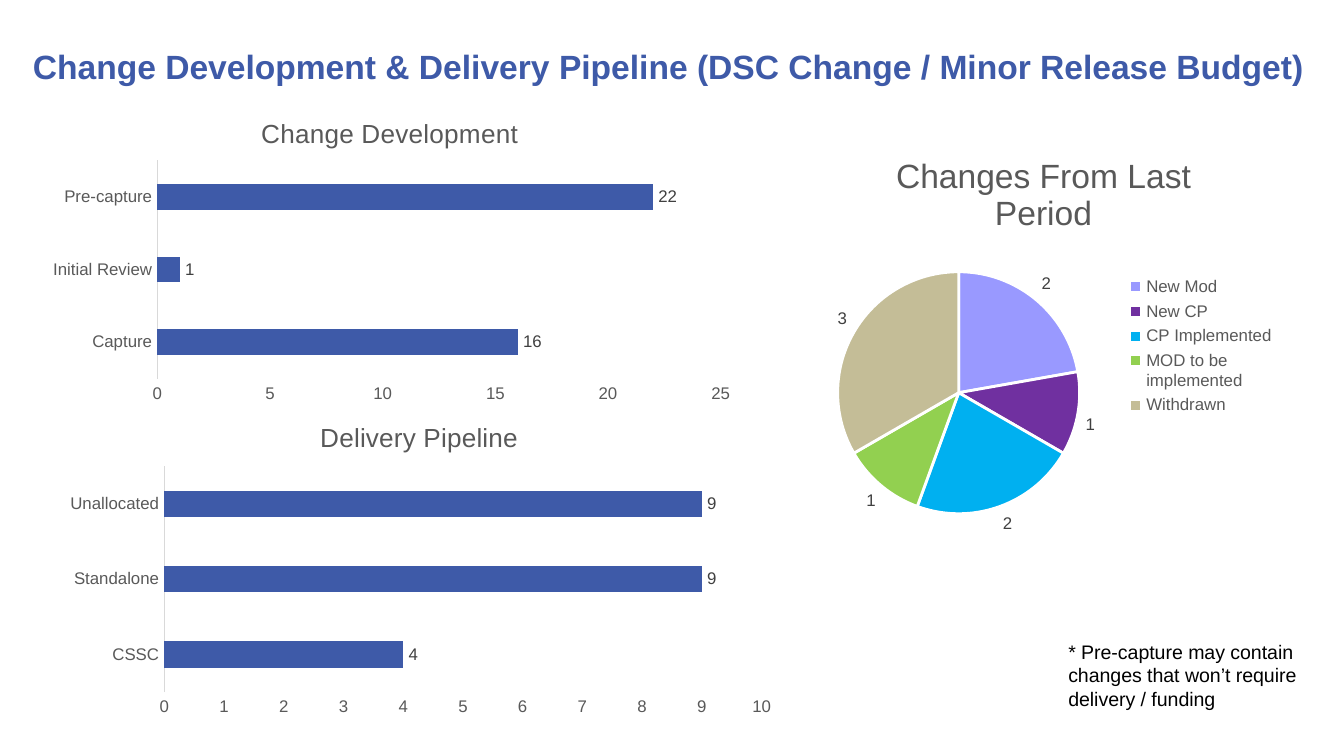
from lxml import etree
from pptx import Presentation
from pptx.chart.data import CategoryChartData
from pptx.dml.color import RGBColor
from pptx.enum.chart import XL_CHART_TYPE as CT, XL_LABEL_POSITION as LP
from pptx.enum.chart import XL_LEGEND_POSITION, XL_TICK_MARK
from pptx.enum.text import MSO_ANCHOR, PP_ALIGN
from pptx.oxml.ns import qn
from pptx.util import Inches, Pt

BLUE, GREY, DARK = "3E5AA8", "595959", "404040"


def style(font, size, color, bold=False):
    font.name, font.size, font.bold = "Arial", Pt(size), bold
    font.color.rgb = RGBColor.from_string(color)


def place(layout, x, y, w, h, inner=False):
    """Fix a chart part at fractions of the chart's size."""
    for child in list(layout):
        layout.remove(child)
    manual = etree.SubElement(layout, qn("c:manualLayout"))
    values = [("layoutTarget", "inner")] if inner else []
    values += [("xMode", "edge"), ("yMode", "edge"),
               ("x", x), ("y", y), ("w", w), ("h", h)]
    for tag, value in values:
        etree.SubElement(manual, qn("c:" + tag)).set("val", str(value))


# Widescreen slide, 16:9
prs = Presentation()
prs.slide_width, prs.slide_height = Inches(10), Inches(10 * 9 / 16)
s = prs.slides.add_slide(prs.slide_layouts[5])

# Title
sp = s.shapes.title
sp.left, sp.top, sp.width, sp.height = [Inches(v) for v in (0.07, 0.14, 9.88, 0.7)]
tf = sp.text_frame
tf.vertical_anchor = MSO_ANCHOR.MIDDLE
p = tf.paragraphs[0]
p.text = "Change Development & Delivery Pipeline (DSC Change / Minor Release Budget) "
p.alignment = PP_ALIGN.CENTER
style(p.font, 18, BLUE, True)

# Footnote
sp = s.shapes.add_textbox(Inches(7.85), Inches(4.71), Inches(2.19), Inches(0.63))
tf = sp.text_frame
tf.word_wrap = True
p = tf.paragraphs[0]
p.text = "* Pre-capture may contain changes that won’t require delivery / funding"
style(p.font, 10.5, "000000")

# Charts: type, title, title size, position, plot area, data
charts = [
    (CT.BAR_CLUSTERED, "Change Development", 14, (0.28, 0.73, 5.24, 2.32),
     (0.17, 0.2, 0.8, 0.7),
     {"Capture": 16, "Initial Review": 1, "Pre-capture": 22}),
    (CT.BAR_CLUSTERED, "Delivery Pipeline", 14, (0.41, 2.99, 5.42, 2.4),
     (0.15, 0.2, 0.82, 0.7),
     {"CSSC": 4, "Standalone": 9, "Unallocated": 9}),
    (CT.PIE, "Changes From Last Period", 18, (5.96, 0.98, 3.61, 3.16),
     (0.07, 0.33, 0.51, 0.57),
     {"New Mod": 2, "New CP": 1, "CP Implemented": 2,
      "MOD to be implemented": 1, "Withdrawn": 3}),
]
for kind, title, size, box, area, values in charts:
    data = CategoryChartData()
    data.categories = list(values)
    data.add_series("Series 1", list(values.values()))
    chart = s.shapes.add_chart(kind, *[Inches(v) for v in box], data).chart
    style(chart.font, 10, "000000")

    p = chart.chart_title.text_frame.paragraphs[0]
    p.text = title
    style(p.font, size, GREY)
    chart.chart_title.include_in_layout = False

    plot = chart.plots[0]
    plot_area = chart._chartSpace.chart.plotArea
    layout = plot_area.find(qn("c:layout"))
    if layout is None:
        layout = etree.Element(qn("c:layout"))
        plot_area.insert(0, layout)
    place(layout, *area, inner=True)

    plot.has_data_labels = True
    labels = plot.data_labels
    labels.show_value = True
    labels.position = LP.OUTSIDE_END
    style(labels.font, 9, DARK)
    series = plot.series[0]

    if kind == CT.PIE:
        # Slices and legend
        plot.vary_by_categories = True
        for i, color in enumerate(["9999FF", "7030A0", "00B0F0", "92D050", "C4BD97"]):
            fmt = series.points[i].format
            fmt.fill.solid()
            fmt.fill.fore_color.rgb = RGBColor.from_string(color)
            fmt.line.width = Pt(1.5)
            fmt.line.color.rgb = RGBColor.from_string("FFFFFF")
        chart.has_legend = True
        legend = chart.legend
        legend.position = XL_LEGEND_POSITION.RIGHT
        legend.include_in_layout = False
        style(legend.font, 9, GREY)
        layout = etree.Element(qn("c:layout"))
        legend._element.find(qn("c:legendPos")).addnext(layout)
        place(layout, 0.67, 0.33, 0.31, 0.35)
    else:
        # Bars and axes
        plot.vary_by_categories = False
        plot.gap_width = 182
        chart.has_legend = False
        series.format.fill.solid()
        series.format.fill.fore_color.rgb = RGBColor.from_string(BLUE)
        for axis in (chart.category_axis, chart.value_axis):
            axis.has_major_gridlines = False
            axis.major_tick_mark = axis.minor_tick_mark = XL_TICK_MARK.NONE
            style(axis.tick_labels.font, 9, GREY)
        chart.value_axis.format.line.fill.background()
        line = chart.category_axis.format.line
        line.width = Pt(0.75)
        line.color.rgb = RGBColor.from_string("D9D9D9")

prs.save("out.pptx")
